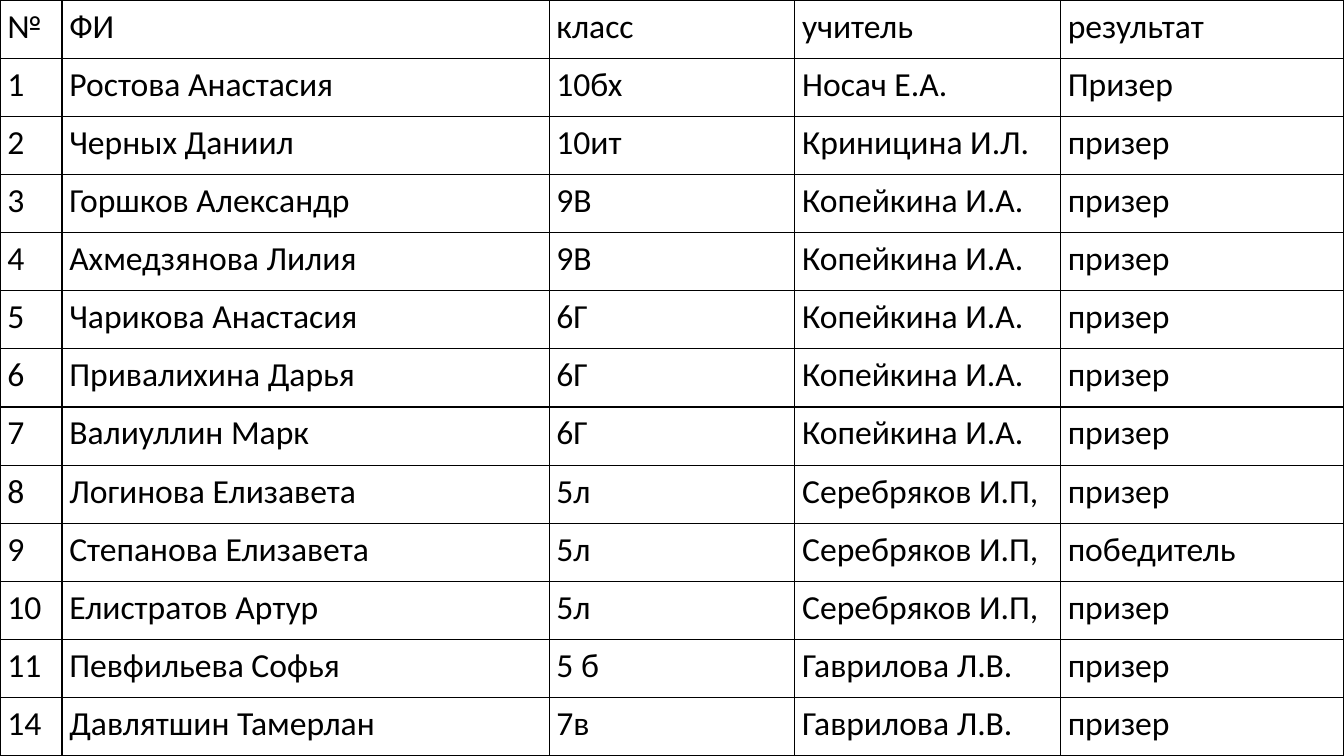
from lxml.etree import SubElement
from pptx import Presentation
from pptx.dml.color import RGBColor
from pptx.oxml.ns import qn
from pptx.util import Emu, Pt

SLIDE_WIDTH, SLIDE_HEIGHT = 1280, 720
COLUMN_WIDTHS = [59, 464, 234, 253, 270]
SIDE_MARGIN = 7
BLACK = "000000"

HEADER = ("№", "ФИ", "класс", "учитель", "результат")
STUDENTS = [
    ("1", "Ростова Анастасия", "10бх", "Носач Е.А.", "Призер"),
    ("2", "Черных Даниил", "10ит", "Криницина И.Л.", "призер"),
    ("3", "Горшков Александр", "9В", "Копейкина И.А.", "призер"),
    ("4", "Ахмедзянова Лилия", "9В", "Копейкина И.А.", "призер"),
    ("5", "Чарикова Анастасия", "6Г", "Копейкина И.А.", "призер"),
    ("6", "Привалихина Дарья", "6Г", "Копейкина И.А.", "призер"),
    ("7", "Валиуллин Марк", "6Г", "Копейкина И.А.", "призер"),
    ("8", "Логинова Елизавета", "5л", "Серебряков И.П,", "призер"),
    ("9", "Степанова Елизавета", "5л", "Серебряков И.П,", "победитель"),
    ("10", "Елистратов Артур", "5л", "Серебряков И.П,", "призер"),
    ("11", "Певфильева Софья", "5 б", "Гаврилова Л.В.", "призер"),
    ("14", "Давлятшин Тамерлан", "7в", "Гаврилова Л.В.", "призер"),
]


def px(length):
    """Turn pixels into EMU."""
    return Emu(length * 9525)


def color(hex_string):
    """Turn a hex string into a colour."""
    return RGBColor.from_string(hex_string)


def add_borders(cell):
    """Draw a thin black line on each side of a cell."""
    properties = cell._tc.get_or_add_tcPr()
    for position, side in enumerate(("a:lnL", "a:lnR", "a:lnT", "a:lnB")):
        line = SubElement(properties, qn(side), w=str(Pt(1)))
        fill = SubElement(line, qn("a:solidFill"))
        SubElement(fill, qn("a:srgbClr"), val=BLACK)
        properties.insert(position, line)


def fill_cell(cell, text):
    """Write the text of a cell and set its look."""
    cell.margin_left = cell.margin_right = px(SIDE_MARGIN)
    cell.margin_top = cell.margin_bottom = 0
    cell.fill.background()
    add_borders(cell)
    para = cell.text_frame.paragraphs[0]
    para.line_spacing = 1.15
    span = para.add_run()
    span.text = text
    span.font.name = "Calibri"
    span.font.size = Pt(24)
    span.font.color.rgb = color(BLACK)


def add_results_table(page, box):
    """Fill the box with the table of results."""
    records = [HEADER, *STUDENTS]
    left, top, width, height = map(px, box)
    table = page.shapes.add_table(
        len(records), len(HEADER), left, top, width, height
    ).table
    table.first_row = table.horz_banding = False
    for column, column_width in zip(table.columns, COLUMN_WIDTHS):
        column.width = px(column_width)
    for row, record in zip(table.rows, records):
        row.height = height // len(records)
        for cell, text in zip(row.cells, record):
            fill_cell(cell, text)


def main():
    """Build the deck and save it."""
    deck = Presentation()
    deck.slide_width, deck.slide_height = px(SLIDE_WIDTH), px(SLIDE_HEIGHT)
    page = deck.slides.add_slide(deck.slide_layouts[6])
    add_results_table(page, (0, 0, SLIDE_WIDTH, SLIDE_HEIGHT))
    deck.save("out.pptx")


if __name__ == "__main__":
    main()
